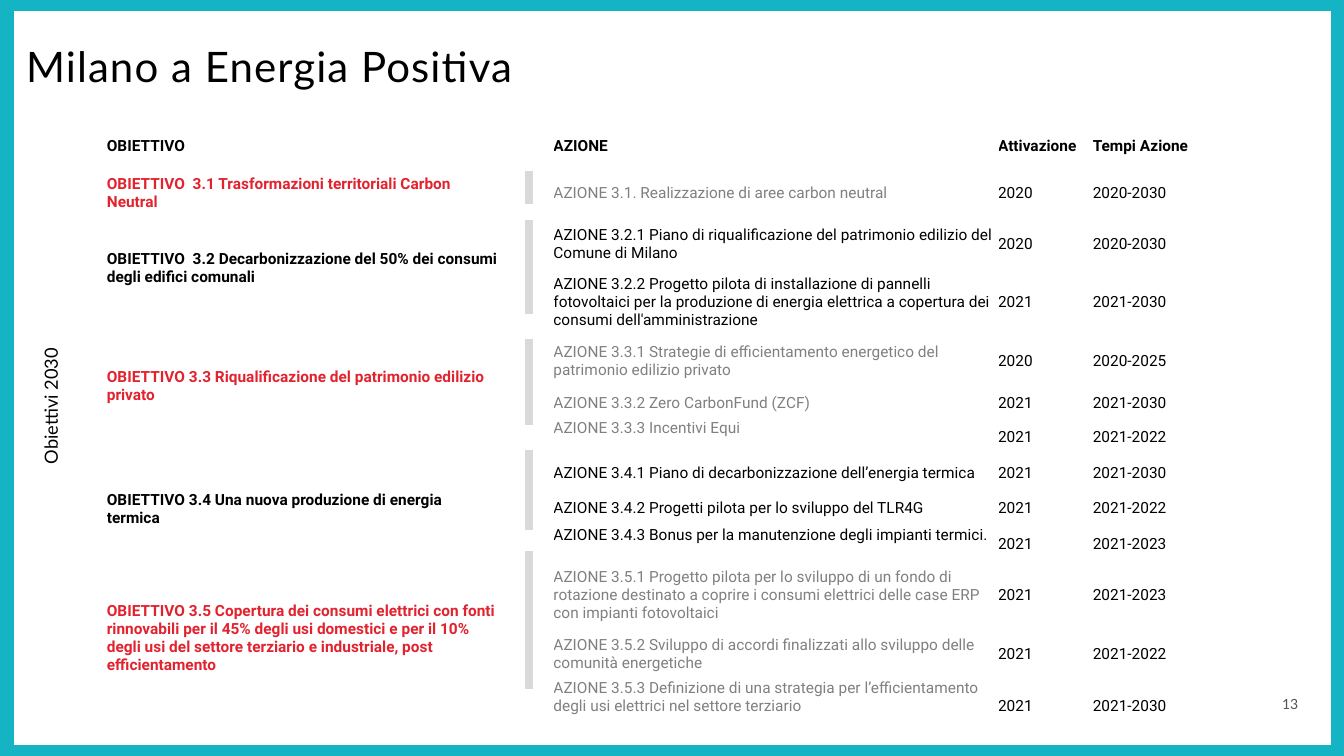
from lxml.etree import SubElement
from pptx import Presentation
from pptx.dml.color import RGBColor
from pptx.enum.shapes import MSO_CONNECTOR, MSO_SHAPE
from pptx.enum.text import MSO_ANCHOR, MSO_AUTO_SIZE, PP_ALIGN
from pptx.oxml.ns import qn
from pptx.util import Inches, Pt

TEAL = RGBColor(0x15, 0xB4, 0xC5)
RED = RGBColor(0xE2, 0x23, 0x2F)
BLACK = RGBColor(0x00, 0x00, 0x00)
GREY = RGBColor(0x80, 0x80, 0x80)
BAR_GREY = RGBColor(0xD9, 0xD9, 0xD9)
NUMBER_GREY = RGBColor(0x53, 0x53, 0x53)

HEADERS = ["OBIETTIVO", "", "AZIONE", "Attivazione", "Tempi Azione"]
COLUMN_SHARES = [29.1, 4.13, 33.08, 7.05, 8.25]
HEADER_SHARE = 5.87
SPARE_LINE = 2.4
BAR_X = 39.38

# Each goal: text, colour, spare line below, bar span, actions (row share, text, period, spare line below)
GOALS = [
    ("OBIETTIVO  3.1 Trasformazioni territoriali Carbon Neutral", RED, False, (22.67, 26.93), [
        (6.67, "AZIONE 3.1. Realizzazione di aree carbon neutral", "2020-2030", False)]),
    ("OBIETTIVO  3.2 Decarbonizzazione del 50% dei consumi degli edifici comunali", BLACK, True, (29.07, 41.6), [
        (6.67, "AZIONE 3.2.1 Piano di riqualificazione del patrimonio edilizio del Comune di Milano",
         "2020-2030", False),
        (8.8, "AZIONE 3.2.2 Progetto pilota di installazione di pannelli fotovoltaici per la produzione "
         "di energia elettrica a copertura dei consumi dell'amministrazione", "2021-2030", False)]),
    ("OBIETTIVO 3.3 Riqualificazione del patrimonio edilizio privato", RED, True, (44.8, 56.27), [
        (6.67, "AZIONE 3.3.1 Strategie di efficientamento energetico del patrimonio edilizio privato",
         "2020-2025", False),
        (4.4, "AZIONE 3.3.2 Zero CarbonFund (ZCF)", "2021-2030", False),
        (4.4, "AZIONE 3.3.3 Incentivi Equi", "2021-2022", True)]),
    ("OBIETTIVO 3.4 Una nuova produzione di energia termica", BLACK, False, (59.47, 70.13), [
        (4.67, "AZIONE 3.4.1 Piano di decarbonizzazione dell’energia termica", "2021-2030", False),
        (4.67, "AZIONE 3.4.2 Progetti pilota per lo sviluppo del TLR4G", "2021-2022", False),
        (4.67, "AZIONE 3.4.3 Bonus per la manutenzione degli impianti termici.", "2021-2023", True)]),
    ("OBIETTIVO 3.5 Copertura dei consumi elettrici con fonti rinnovabili per il 45% degli usi domestici "
     "e per il 10% degli usi del settore terziario e industriale, post efficientamento", RED, True, (72.93, 91.2), [
        (8.8, "AZIONE 3.5.1 Progetto pilota per lo sviluppo di un fondo di rotazione destinato a coprire "
         "i consumi elettrici delle case ERP con impianti fotovoltaici", "2021-2023", False),
        (6.67, "AZIONE 3.5.2 Sviluppo di accordi finalizzati allo sviluppo delle comunità energetiche",
         "2021-2022", False),
        (6.67, "AZIONE 3.5.3 Definizione di una strategia per l’efficientamento degli usi elettrici "
         "nel settore terziario", "2021-2030", True)]),
]


class PlanSlide:
    """Draws the plan on one slide, with lengths in percent of its width and height."""

    def __init__(self, deck):
        self.deck = deck
        self.page = deck.slides.add_slide(deck.slide_layouts[5])
        self.heading_font, self.table_font, self.table_size = "Lato", "Roboto", 11

    def across(self, share):
        return round(self.deck.slide_width * share / 100)

    def down(self, share):
        return round(self.deck.slide_height * share / 100)

    def area(self, left, top, width, height):
        return self.across(left), self.down(top), self.across(width), self.down(height)

    def style(self, para, font, size, color, bold=False):
        for span in para.runs:
            span.font.name, span.font.size, span.font.bold = font, Pt(size), bold
            span.font.color.rgb = color

    def fill_text(self, box, text, size, color, align):
        frame = box.text_frame
        frame.margin_left = frame.margin_right = frame.margin_top = frame.margin_bottom = 0
        frame.word_wrap, frame.auto_size = True, MSO_AUTO_SIZE.NONE
        frame.vertical_anchor = MSO_ANCHOR.TOP
        frame.text = text
        para = frame.paragraphs[0]
        para.alignment = align
        self.style(para, self.heading_font, size, color)
        return para

    def frame(self, area, color, weight):
        box = self.page.shapes.add_shape(MSO_SHAPE.RECTANGLE, *self.area(*area))
        box.shadow.inherit = False
        box.fill.background()
        box.line.color.rgb, box.line.width = color, Pt(weight)

    def title(self, area, text, size, spacing):
        box = self.page.shapes.title
        box.left, box.top, box.width, box.height = self.area(*area)
        para = self.fill_text(box, text, size, BLACK, PP_ALIGN.LEFT)
        para.runs[0].font._element.set("spc", str(spacing))

    def label(self, area, text, size, color, rotation=0):
        box = self.page.shapes.add_textbox(*self.area(*area))
        box.rotation = rotation
        self.fill_text(box, text, size, color, PP_ALIGN.CENTER)

    def bar(self, x, top, bottom):
        line = self.page.shapes.add_connector(
            MSO_CONNECTOR.STRAIGHT, self.across(x), self.down(top), self.across(x), self.down(bottom))
        line.line.color.rgb, line.line.width = BAR_GREY, Pt(6)
        SubElement(line._element.spPr, qn("a:effectLst"))

    def table(self, left, top, columns, rows):
        area = self.area(left, top, sum(columns), sum(rows))
        table = self.page.shapes.add_table(len(rows), len(columns), *area).table
        table.first_row = table.horz_banding = False
        for column, share in zip(table.columns, columns):
            column.width = self.across(share)
        for row, share in zip(table.rows, rows):
            row.height = self.down(share)
        for cell in table.iter_cells():
            cell.fill.background()
            cell.vertical_anchor = MSO_ANCHOR.MIDDLE
            cell.margin_left = cell.margin_right = cell.margin_top = cell.margin_bottom = 0
            end = SubElement(cell.text_frame.paragraphs[0]._p, qn("a:endParaRPr"))
            end.set("sz", str(self.table_size * 100))
        return table

    def cell(self, cell, text, color=BLACK, bold=False, spare=False):
        para = cell.text_frame.paragraphs[0]
        para.text = text
        self.style(para, self.table_font, self.table_size, color, bold)
        if spare:
            cell.margin_bottom = self.down(SPARE_LINE)


def main():
    deck = Presentation()
    deck.slide_width, deck.slide_height = Inches(13.33), Inches(7.5)
    plan = PlanSlide(deck)
    plan.frame((0.08, -0.27, 99.92, 100.53), TEAL, 19)
    plan.label((95.05, 92, 1.88, 2.27), "13", 10, NUMBER_GREY)

    row_shares = [HEADER_SHARE] + [action[0] for goal in GOALS for action in goal[-1]]
    table = plan.table(7.95, 16.4, COLUMN_SHARES, row_shares)
    for column, header in enumerate(HEADERS):
        if header:
            plan.cell(table.cell(0, column), header, bold=True)
    row = 1
    for goal, color, goal_spare, bar, actions in GOALS:
        goal_cell = table.cell(row, 0)
        if len(actions) > 1:
            goal_cell.merge(table.cell(row + len(actions) - 1, 0))
        plan.cell(goal_cell, goal, color, True, goal_spare)
        plan.bar(BAR_X, *bar)
        for _, action, period, spare in actions:
            plan.cell(table.cell(row, 2), action, GREY if color == RED else BLACK, spare=spare)
            plan.cell(table.cell(row, 3), period[:4])
            plan.cell(table.cell(row, 4), period)
            row += 1

    plan.title((1.95, 5.33, 77.72, 6.67), "Milano a Energia Positiva", 30, 80)
    plan.label((-15.53, 52.27, 38.63, 2.93), "Obiettivi 2030", 13, BLACK, 270)
    deck.save("out.pptx")


if __name__ == "__main__":
    main()
